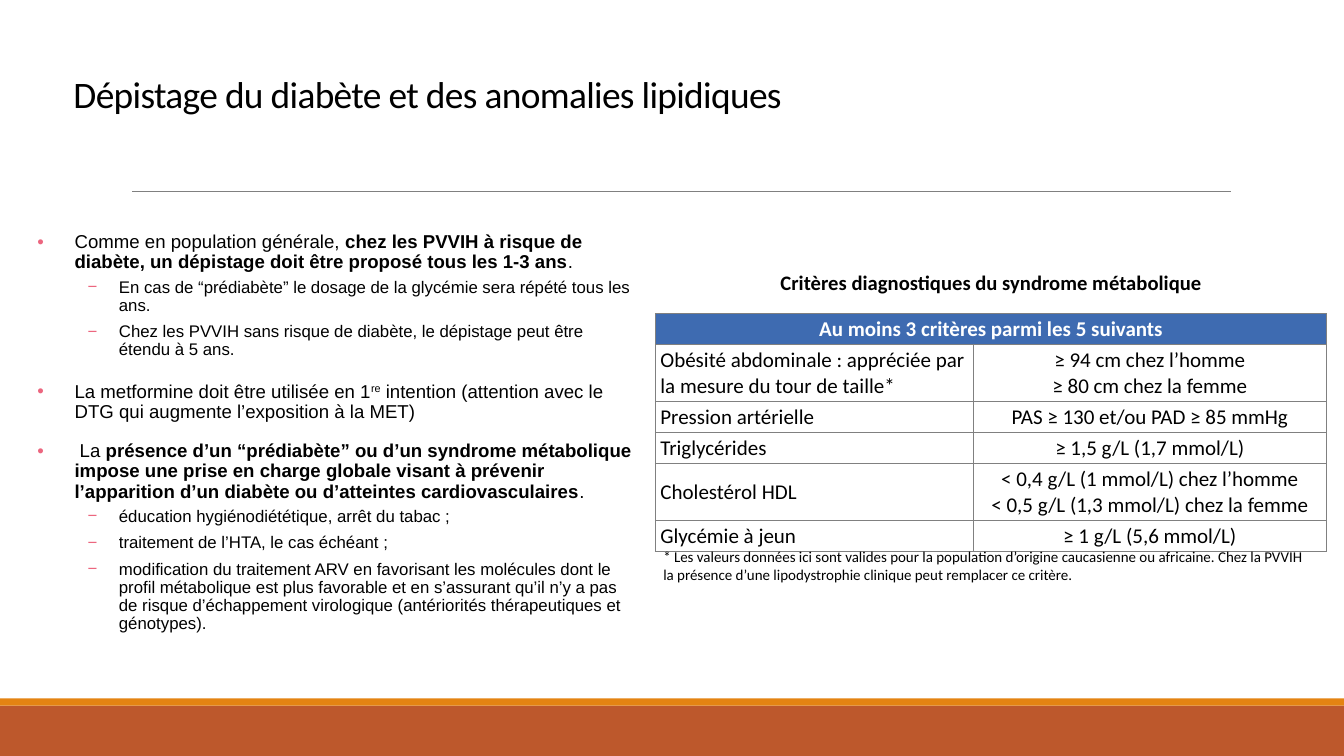
import pptx
import pptx.dml.color
import pptx.enum.shapes
import pptx.enum.text
import pptx.oxml
import pptx.oxml.ns
import pptx.util
from dataclasses import dataclass
from lxml import etree

Inches = pptx.util.Inches
Pt = pptx.util.Pt
ALIGN = pptx.enum.text.PP_ALIGN
ANCHOR = pptx.enum.text.MSO_ANCHOR


@dataclass(frozen=True)
class Theme:
    black: str = "000000"
    white: str = "FFFFFF"
    rust: str = "BD582C"
    orange: str = "E48312"
    gray: str = "808080"
    blue: str = "3E6BB1"
    pink: str = "EC667F"
    heading_font: str = "Calibri"
    body_font: str = "Arial"
    title_size: float = 26.7
    point_size: float = 13.3
    detail_size: float = 12
    caption_size: float = 14.7
    cell_size: float = 15
    note_size: float = 10.7


THEME = Theme()
POINT = {
    "symbol": "•", "size": THEME.point_size, "margin": 0.37, "hanging": 0.37,
    "paragraph": {"line_spacing": 0.9, "space_before": Pt(12), "space_after": Pt(2)},
}
DETAIL = {
    "symbol": "−", "size": THEME.detail_size, "margin": 0.81, "hanging": 0.31,
    "paragraph": {"level": 1, "line_spacing": 0.9, "space_before": Pt(2), "space_after": Pt(4)},
}
BOLD = {"bold": True}

RECOMMENDATIONS = [
    (POINT, [
        ("Comme en population générale, ", {}),
        ("chez les PVVIH à risque de diabète, un dépistage doit être proposé tous les 1-3 ans", BOLD),
        (".", {}),
    ]),
    (DETAIL, [("En cas de “prédiabète” le dosage de la glycémie sera répété tous les ans.", {})]),
    (DETAIL, [("Chez les PVVIH sans risque de diabète, le dépistage peut être étendu à 5 ans.", {})]),
    (POINT, [
        ("La metformine doit être utilisée en 1", {}),
        ("re", {"superscript": True}),
        (" intention (attention avec le DTG qui augmente l’exposition à la MET)", {}),
    ]),
    (POINT, [
        (" La ", {}),
        ("présence d’un “prédiabète” ou d’un syndrome métabolique impose une prise en charge "
         "globale visant à prévenir l’apparition d’un diabète ou d’atteintes cardiovasculaires", BOLD),
        (".", {}),
    ]),
    (DETAIL, [("éducation hygiénodiététique, arrêt du tabac ;", {})]),
    (DETAIL, [("traitement de l’HTA, le cas échéant ;", {})]),
    (DETAIL, [
        ("modification du traitement ARV en favorisant les molécules dont le profil métabolique "
         "est plus favorable et en s’assurant qu’il n’y a pas de risque d’échappement virologique "
         "(antériorités thérapeutiques et génotypes).", {}),
    ]),
]

CRITERIA = [
    ("Au moins 3 critères parmi les 5 suivants", ""),
    ("Obésité abdominale : appréciée par la mesure du tour de taille*",
     "≥ 94 cm chez l’homme\n≥ 80 cm chez la femme"),
    ("Pression artérielle", "PAS ≥ 130 et/ou PAD ≥ 85 mmHg"),
    ("Triglycérides", "≥ 1,5 g/L (1,7 mmol/L)"),
    ("Cholestérol HDL", "< 0,4 g/L (1 mmol/L) chez l’homme\n< 0,5 g/L (1,3 mmol/L) chez la femme"),
    ("Glycémie à jeun", "≥ 1 g/L (5,6 mmol/L)"),
]


def apply(target, values):
    for name, value in values.items():
        setattr(target, name, value)


def rgb(color):
    return pptx.dml.color.RGBColor.from_string(color)


def add_xml(parent, tag, **attributes):
    element = etree.SubElement(parent, pptx.oxml.ns.qn(tag))
    for name, value in attributes.items():
        element.set(name, str(value))
    return element


class SlideBuilder:
    def __init__(self, slide, theme):
        self.slide = slide
        self.theme = theme

    def style(self, font, size, name, color=None, **values):
        apply(font, {"size": Pt(size), "name": name, **values})
        font.color.rgb = rgb(color or self.theme.black)

    def band(self, top, height, color):
        band = self.slide.shapes.add_shape(
            pptx.enum.shapes.MSO_SHAPE.RECTANGLE, 0, Inches(top), Inches(13.33), Inches(height))
        band.shadow.inherit = False
        band.fill.solid()
        band.fill.fore_color.rgb = rgb(color)
        band.line.fill.background()

    def rule(self, left, right, y):
        rule = self.slide.shapes.add_connector(
            pptx.enum.shapes.MSO_CONNECTOR.STRAIGHT, Inches(left), Inches(y), Inches(right), Inches(y))
        rule.line.color.rgb = rgb(self.theme.gray)
        rule.line.width = Pt(0.5)
        add_xml(rule.element.spPr, "a:effectLst")

    def frame(self, box, **values):
        frame = self.slide.shapes.add_textbox(*map(Inches, box)).text_frame
        apply(frame, {"word_wrap": True, **values})
        return frame

    def text(self, box, words, size, bold=False, spacing=None, frame_values=None, **values):
        paragraph = self.frame(box, **(frame_values or {})).paragraphs[0]
        apply(paragraph, values)
        run = paragraph.add_run()
        run.text = words
        self.style(run.font, size, self.theme.heading_font, bold=bold)
        if spacing is not None:
            run.font._element.set("spc", str(spacing))

    def bullets(self, box, items):
        frame = self.frame(box, margin_left=0, margin_right=0)
        for index, (level, runs) in enumerate(items):
            paragraph = frame.add_paragraph() if index else frame.paragraphs[0]
            apply(paragraph, level["paragraph"])
            properties = paragraph._p.get_or_add_pPr()
            properties.set("marL", str(Inches(level["margin"])))
            properties.set("indent", str(-Inches(level["hanging"])))
            add_xml(add_xml(properties, "a:buClr"), "a:srgbClr", val=self.theme.pink)
            add_xml(properties, "a:buFont", typeface=self.theme.body_font)
            add_xml(properties, "a:buChar", char=level["symbol"])
            for words, values in runs:
                run = paragraph.add_run()
                run.text = words
                self.style(run.font, level["size"], self.theme.body_font,
                           bold=values.get("bold", False))
                if values.get("superscript"):
                    run.font._element.set("baseline", "30000")

    def cell(self, cell, words, header, centered):
        apply(cell, {
            "margin_left": Inches(0.05), "margin_right": Inches(0.05),
            "margin_top": Inches(0.03), "margin_bottom": Inches(0.03),
            "vertical_anchor": ANCHOR.TOP if header else ANCHOR.MIDDLE,
        })
        properties = cell._tc.get_or_add_tcPr()
        for side in ("L", "R", "T", "B"):
            border = add_xml(properties, f"a:ln{side}", w=Pt(0.75))
            add_xml(add_xml(border, "a:solidFill"), "a:srgbClr", val=self.theme.gray)
        cell.fill.solid()
        cell.fill.fore_color.rgb = rgb(self.theme.blue if header else self.theme.white)
        cell.text_frame.text = words
        for paragraph in cell.text_frame.paragraphs:
            paragraph.alignment = ALIGN.CENTER if centered else ALIGN.LEFT
            self.style(paragraph.font, self.theme.cell_size, self.theme.heading_font)
            for run in paragraph.runs:
                self.style(run.font, self.theme.cell_size, self.theme.heading_font,
                           self.theme.white if header else self.theme.black, bold=header)

    def table(self, box, rows, widths):
        table = self.slide.shapes.add_table(len(rows), len(widths), *map(Inches, box)).table
        for column, width in zip(table.columns, widths):
            column.width = Inches(width)
        for row_index, row in enumerate(rows):
            table.rows[row_index].height = Inches(0.54 if "\n" in row[1] else 0.3)
            for column_index, words in enumerate(row):
                header = row_index == 0
                self.cell(table.cell(row_index, column_index), words, header,
                          header or column_index == 1)
        table.rows[1].height = Inches(0.54)
        table.cell(0, 0).merge(table.cell(0, len(widths) - 1))


def main():
    presentation = pptx.Presentation()
    apply(presentation, {"slide_width": Inches(13.33), "slide_height": Inches(7.5)})
    builder = SlideBuilder(presentation.slides.add_slide(presentation.slide_layouts[6]), THEME)
    builder.band(7, 0.5, THEME.rust)
    builder.band(6.93, 0.07, THEME.orange)
    builder.rule(1.31, 12.21, 1.9)
    builder.text((0.63, 0.6, 12.22, 0.73), "Dépistage du diabète et des anomalies lipidiques",
                 THEME.title_size, spacing=-50, line_spacing=0.85,
                 frame_values={"vertical_anchor": ANCHOR.MIDDLE})
    builder.bullets((0.37, 2.26, 5.94, 4.27), RECOMMENDATIONS)
    builder.text((6.5, 2.63, 6.66, 0.35), "Critères diagnostiques du syndrome métabolique",
                 THEME.caption_size, bold=True, alignment=ALIGN.CENTER)
    builder.table((6.5, 3.11, 6.66, 2.28), CRITERIA, (3.15, 3.51))
    builder.text((6.48, 5.38, 6.68, 0.46),
                 "* Les valeurs données ici sont valides pour la population d’origine caucasienne "
                 "ou africaine. Chez la PVVIH la présence d’une lipodystrophie clinique peut "
                 "remplacer ce critère.", THEME.note_size)
    presentation.save("out.pptx")


if __name__ == "__main__":
    main()
